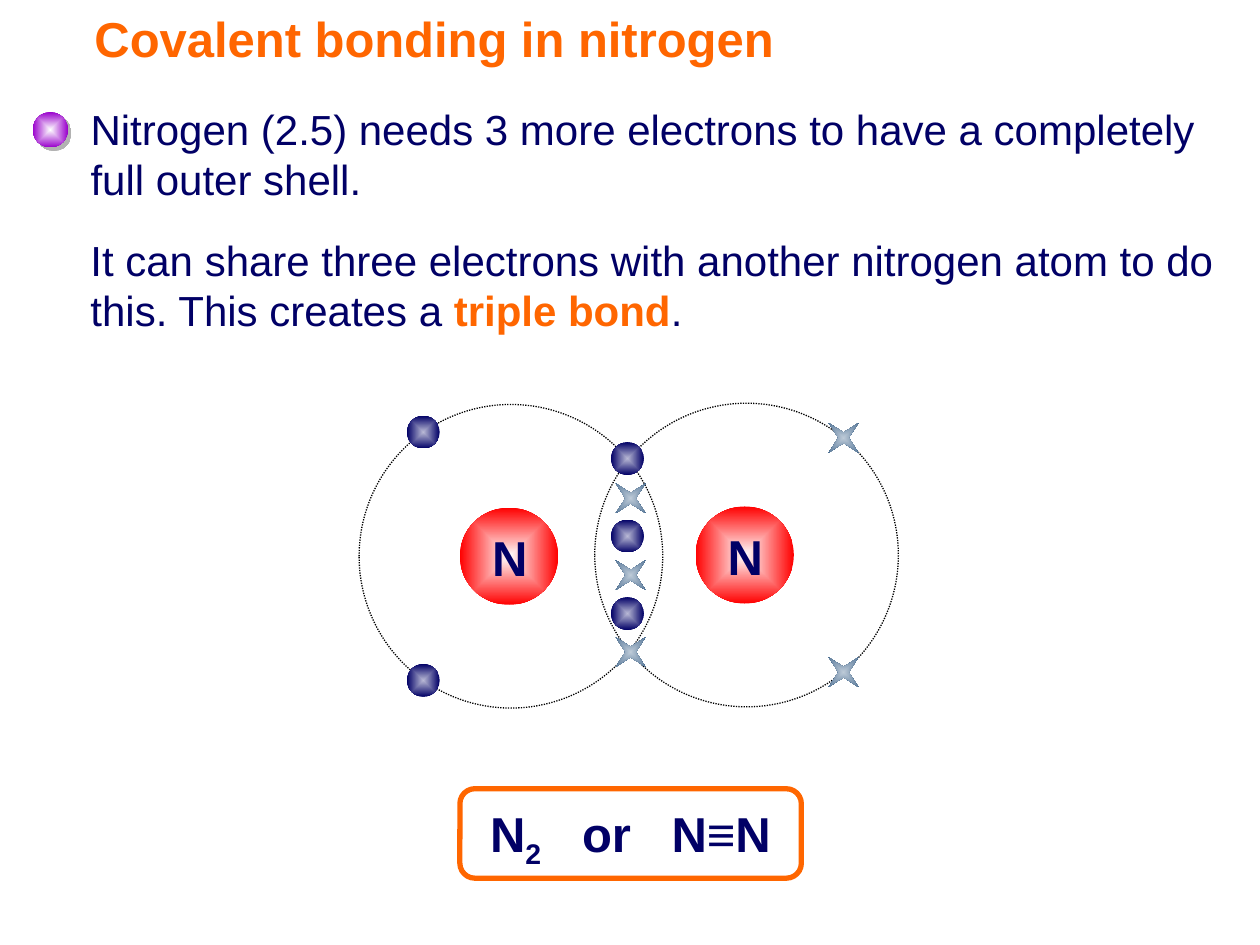
from lxml import etree
from pptx import Presentation
from pptx import util as u
from pptx.dml.color import RGBColor
from pptx.enum import dml, shapes, text
from pptx.oxml import ns

NAVY = "010066"
ORANGE = "FF6600"


def colour(value):
    return RGBColor.from_string(value)


def child(parent, tag, **attributes):
    return etree.SubElement(parent, ns.qn(tag), attributes)


class BondSlide:
    font = "Arial"
    heading_size = 28
    body_size = 24

    def __init__(self, deck):
        self.slide = deck.slides.add_slide(deck.slide_layouts[6])

    def shape(self, kind, left, top, width, height):
        shape = self.slide.shapes.add_shape(
            kind, *map(u.Inches, (left, top, width, height)))
        shape.shadow.inherit = False
        shape.fill.background()
        shape.line.fill.background()
        return shape

    def outline(self, shape, line_colour, width):
        shape.line.color.rgb = colour(line_colour)
        shape.line.width = u.Pt(width)

    def glow(self, shape, centre, edge):
        shape.fill.gradient()
        for stop, position, value in zip(
                shape.fill.gradient_stops, (0, 1), (centre, edge)):
            stop.position = position
            stop.color.rgb = colour(value)
        gradient = shape.element.spPr.find(ns.qn("a:gradFill"))
        gradient.remove(gradient.find(ns.qn("a:lin")))
        path = child(gradient, "a:path", path="circle")
        path.set("path", "rect")
        child(path, "a:fillToRect", l="50000", t="50000", r="50000", b="50000")

    def ball(self, left, top, width, height, centre, edge):
        ball = self.shape(shapes.MSO_SHAPE.OVAL, left, top, width, height)
        self.glow(ball, centre, edge)
        return ball

    def bullet(self, left, top, size):
        bullet = self.ball(left, top, size, size, "FFFFFF", "9900CC")
        effects = bullet.element.spPr.find(ns.qn("a:effectLst"))
        shadow = child(effects, "a:outerShdw", dist=str(u.Pt(2.8)),
                       dir="2700000", algn="ctr", rotWithShape="0")
        child(shadow, "a:srgbClr", val="B2B2B2")

    def dot(self, left, top):
        self.ball(left, top, 0.26, 0.26, "B9B9D5", NAVY)

    def cross(self, left, top):
        cross = self.shape(shapes.MSO_SHAPE.STAR_4_POINT, left, top, 0.33, 0.33)
        cross.adjustments[0] = 0.125
        cross.rotation = 45
        self.glow(cross, "BECBD8", "013366")

    def atom(self, left, top):
        self.ball(left + 0.8, top + 0.82, 0.78, 0.77, "FFFFFF", "FF0000")
        orbit = self.shape(shapes.MSO_SHAPE.OVAL, left, top, 2.41, 2.41)
        self.outline(orbit, "000000", 0.75)
        orbit.line.dash_style = dml.MSO_LINE.ROUND_DOT
        self.label(left + 0.9, top + 0.93, 0.59, 0.57, [("N", NAVY, True)],
                   self.heading_size, text.PP_ALIGN.CENTER)

    def label(self, left, top, width, height, spans, size,
              align=text.PP_ALIGN.LEFT, indent=0.1, tabs=()):
        box = self.slide.shapes.add_textbox(
            *map(u.Inches, (left, top, width, height)))
        frame = box.text_frame
        frame.word_wrap = True
        frame.margin_left = u.Inches(indent)
        para = frame.paragraphs[0]
        para.alignment = align
        if tabs:
            stops = child(para._p.get_or_add_pPr(), "a:tabLst")
            for position in tabs:
                child(stops, "a:tab", pos=str(u.Inches(position)), algn="l")
        for words, value, bold in spans:
            span = para.add_run()
            span.text = words
            span.font.name = self.font
            span.font.size = u.Pt(size)
            span.font.bold = bold
            span.font.color.rgb = colour(value)
        return frame

    def formula(self):
        frame = self.label(
            3.67, 6.33, 2.67, 0.57,
            [("N", NAVY, True), ("2", NAVY, True), ("\tor\tN≡N", NAVY, True)],
            self.heading_size, indent=0.22, tabs=(0.73, 1.44))
        subscript = frame.paragraphs[0].runs[1]
        subscript.font._element.set("baseline", "-25000")
        border = self.shape(shapes.MSO_SHAPE.ROUNDED_RECTANGLE,
                            3.65, 6.26, 2.71, 0.71)
        self.outline(border, ORANGE, 3)


def main():
    deck = Presentation()
    deck.slide_width = u.Inches(10)
    deck.slide_height = u.Inches(7.5)
    page = BondSlide(deck)

    title = page.label(0, 0, 7.13, 0.6,
                       [("Covalent bonding in nitrogen", ORANGE, True)],
                       page.heading_size, indent=0.75)
    title.vertical_anchor = text.MSO_ANCHOR.MIDDLE

    page.bullet(0.26, 0.89, 0.28)
    page.label(0.62, 0.77, 9.38, 0.9, [
        ("Nitrogen (2.5) needs 3 more electrons to have a completely "
         "full outer shell.", NAVY, False)], page.body_size)
    page.label(0.62, 1.81, 9.24, 0.9, [
        ("It can share three electrons with another nitrogen atom to do this. "
         "This creates a ", NAVY, False),
        ("triple bond", ORANGE, True),
        (".", NAVY, False)], page.body_size)

    page.atom(4.72, 3.2)
    page.atom(2.85, 3.21)
    for pair in range(3):
        page.dot(4.85, 3.51 + 0.615 * pair)
        page.cross(4.84, 3.79 + 0.61 * pair)
    for top in (3.3, 5.27):
        page.dot(3.23, top)
    for top in (3.31, 5.17):
        page.cross(6.53, top)

    page.formula()
    deck.save("out.pptx")


if __name__ == "__main__":
    main()
